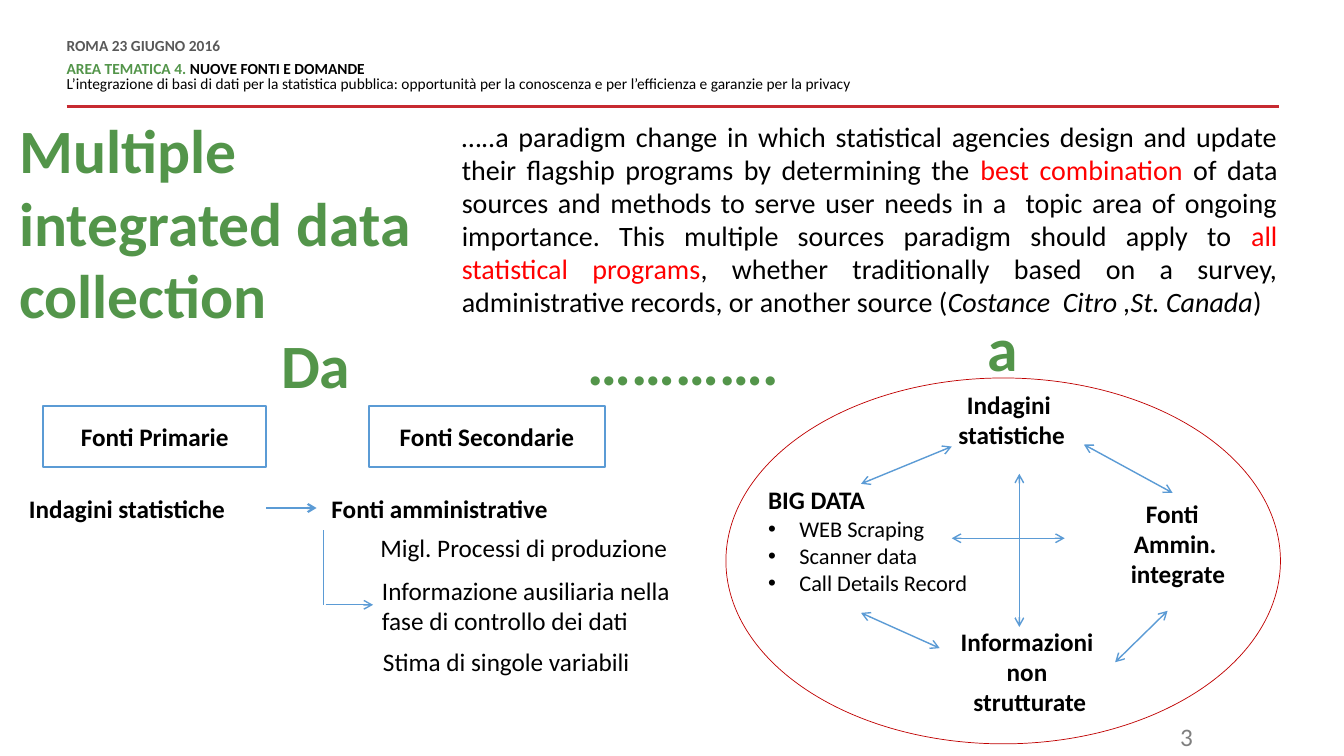
from lxml import etree
from pptx import Presentation
from pptx import util as u
from pptx.dml.color import RGBColor
from pptx.enum import shapes, text
from pptx.oxml.ns import qn

PX = 9144  # 100 px to the inch
GREEN, BLUE, RED, BLACK = "53954A", "5B9BD5", "FF0000", "000000"
LEFT, CENTER, RIGHT, JUSTIFY = (text.PP_ALIGN.LEFT, text.PP_ALIGN.CENTER,
                                text.PP_ALIGN.RIGHT, text.PP_ALIGN.JUSTIFY)
TOP, MIDDLE = text.MSO_ANCHOR.TOP, text.MSO_ANCHOR.MIDDLE


def px(*lengths):
    return [u.Emu(length * PX) for length in lengths]


def color(hex_string):
    return RGBColor.from_string(hex_string)


def write(shape, paras, size=18, fill=BLACK, bold=False, align=LEFT,
          anchor=MIDDLE, spacing=None, inset=None, wrap=True, bullet=False):
    """Each paragraph is a string or a list of (string, format) pairs."""
    frame = shape.text_frame
    frame.word_wrap, frame.vertical_anchor = wrap, anchor
    frame.auto_size = text.MSO_AUTO_SIZE.NONE
    if inset is not None:
        frame.margin_left = frame.margin_right = u.Emu(inset * PX)
        frame.margin_top = frame.margin_bottom = u.Emu(inset * PX)
    for index, runs in enumerate(paras):
        para = frame.paragraphs[0] if index == 0 else frame.add_paragraph()
        if bullet:
            add_bullet(para)
        para.alignment = align
        para.space_before = u.Pt(0)
        if spacing:
            para.line_spacing = spacing
        for words, style in [(runs, {})] if isinstance(runs, str) else runs:
            span = para.add_run()
            span.text = words
            span.font.name, span.font.size = "Calibri", u.Pt(size)
            span.font.bold = style.get("bold", bold)
            span.font.italic = style.get("italic", False)
            span.font.color.rgb = color(style.get("fill", fill))
    return frame


def add_bullet(para):
    props = para._p.get_or_add_pPr()
    props.set("marL", str(31 * PX))
    props.set("indent", str(-31 * PX))
    etree.SubElement(props, qn("a:buFont")).set("typeface", "Arial")
    etree.SubElement(props, qn("a:buChar")).set("char", "•")


def label(page, place, paras, **style):
    return write(page.shapes.add_textbox(*px(*place)), paras, **style)


def outline(page, kind, place, line, width):
    shape = page.shapes.add_shape(kind, *px(*place))
    shape.shadow.inherit = False
    shape.fill.background()
    shape.line.color.rgb, shape.line.width = color(line), u.Pt(width)
    return shape


def connect(page, ends, line=BLUE, width=1, heads=()):
    link = page.shapes.add_connector(shapes.MSO_CONNECTOR.STRAIGHT, *px(*ends))
    link.line.color.rgb, link.line.width = color(line), u.Pt(width)
    for head in heads:
        etree.SubElement(link.line._get_or_add_ln(), qn("a:" + head)).set("type", "arrow")
    etree.SubElement(link._element.spPr, qn("a:effectLst"))


def fill_placeholder(shape, place, paras, **style):
    shape.left, shape.top, shape.width, shape.height = px(*place)
    write(shape, paras, anchor=TOP, **style)


def add_header(page):
    connect(page, (66, 106, 1269, 106), "C72A31", 2)
    frame = label(page, (66, 39, 911, 70), [
        [("ROMA 23 GIUGNO 2016", {"fill": "595959"})],
        [("AREA TEMATICA 4. ", {"fill": GREEN}), ("NUOVE FONTI E DOMANDE", {})],
        [("L’integrazione di basi di dati per la statistica pubblica: opportunità per la "
          "conoscenza e per l’efficienza e garanzie per la privacy", {"bold": False})],
    ], size=11, bold=True, anchor=TOP, spacing=u.Pt(10.8), inset=0)
    frame.paragraphs[0].space_after = u.Pt(6)


def add_title_and_quote(page):
    fill_placeholder(page.shapes.title, (19, 115, 428, 206),
                     ["Multiple integrated data collection"],
                     size=44, fill=GREEN, bold=True, spacing=0.98, inset=0)
    fill_placeholder(page.placeholders[1], (448, 115, 829, 206), [[
        ("…..a paradigm change in which statistical agencies design and update their "
         "flagship programs by determining the ", {}),
        ("best combination ", {"fill": RED}),
        ("of data sources and methods to serve user needs in a  topic area of ongoing "
         "importance. This multiple sources paradigm should apply to ", {}),
        ("all statistical programs", {"fill": RED}),
        (", whether traditionally based on a survey, administrative records, or another "
         "source (", {}),
        ("Costance  Citro ,St. Canada", {"italic": True}),
        (")", {}),
    ]], size=20, align=JUSTIFY, spacing=0.98)


def add_from_side(page):
    # Boxed headings
    for left, width, words in ((43, 221, "Fonti Primarie"), (366, 234, "Fonti Secondarie")):
        box = outline(page, shapes.MSO_SHAPE.RECTANGLE, (left, 403, width, 60), BLUE, 1.5)
        write(box, [words], bold=True, align=CENTER)
    # Sources below them
    for left, words in ((-12, "Indagini statistiche"), (298, "Fonti amministrative")):
        label(page, (left, 474, 276, 60), [words], bold=True, align=CENTER)
    for left, top, align, words in (
            (352, 513, CENTER, "Migl. Processi di produzione"),
            (369, 571, LEFT, "Informazione ausiliaria nella fase di controllo dei dati"),
            (370, 626, LEFT, "Stima di singole variabili")):
        label(page, (left, top, 335, 60), [words], align=align)
    connect(page, (264, 504, 314, 504), width=1.5, heads=["tailEnd"])
    connect(page, (321, 526, 321, 600))
    connect(page, (323, 600, 370, 600), heads=["tailEnd"])


def add_to_side(page):
    # Ring of sources
    for place, paras in (
            ((1090, 509, 151, 60), ["Fonti ", "Ammin.", " integrate"]),
            ((910, 386, 187, 60), ["Indagini ", "statistiche"]),
            ((908, 621, 227, 90), ["Informazioni ", "non ", "strutturate"])):
        label(page, place, paras, bold=True, align=CENTER)
    label(page, (752, 466, 276, 60), ["BIG DATA"], bold=True)
    label(page, (752, 498, 301, 107),
          ["WEB Scraping", "Scanner data", "Call Details Record"], size=16, bullet=True)
    outline(page, shapes.MSO_SHAPE.OVAL, (720, 375, 550, 363), "C00000", 0.5)
    # Two-way arrows between them
    for ends in ((944, 534, 1056, 534), (1011, 470, 1011, 622),
                 (1075, 441, 1163, 489), (1106, 657, 1158, 606),
                 (854, 480, 944, 443), (854, 608, 932, 643)):
        connect(page, ends, heads=["headEnd", "tailEnd"])


def main():
    deck = Presentation()
    deck.slide_width, deck.slide_height = px(1333, 750)
    page = deck.slides.add_slide(deck.slide_layouts[0])
    add_header(page)
    add_title_and_quote(page)
    add_from_side(page)
    # Da … a
    for place, words in (((269, 319, 90, 84), "Da"), ((573, 316, 212, 84), "…………."),
                         ((970, 303, 51, 84), "a")):
        label(page, place, [words], size=44, fill=GREEN, bold=True, anchor=TOP, wrap=False)
    add_to_side(page)
    label(page, (893, 711, 300, 40), ["3"], fill="7F7F7F", align=RIGHT, anchor=TOP)
    deck.save("out.pptx")


if __name__ == "__main__":
    main()
